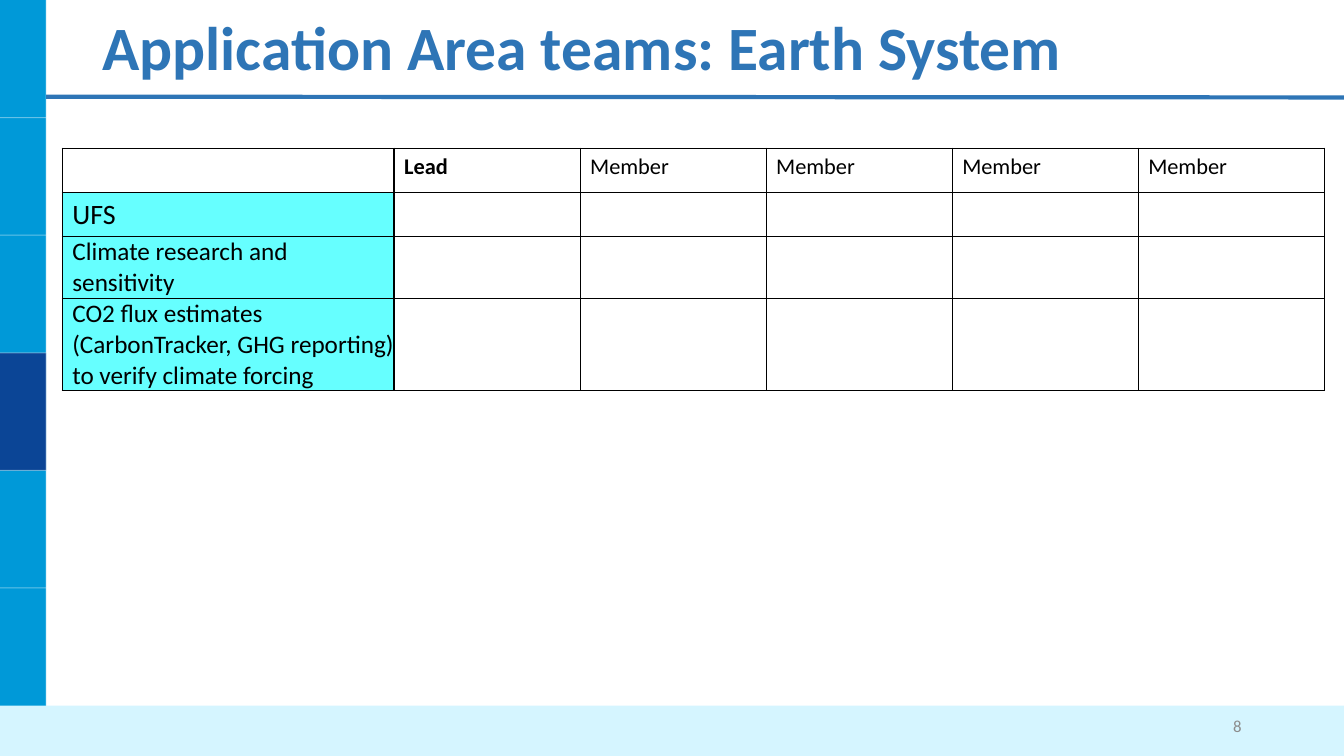
from dataclasses import dataclass

import pptx
import pptx.dml.color
import pptx.enum.shapes
import pptx.enum.text
import pptx.oxml
import pptx.oxml.ns
import pptx.util
from lxml import etree

Pt = pptx.util.Pt
ANCHOR = pptx.enum.text.MSO_ANCHOR
ALIGN = pptx.enum.text.PP_ALIGN

PAGE_WIDTH, PAGE_HEIGHT = 960, 540
BAND_WIDTH = 33
BAND_STEP = 84
FOOTER_TOP = 6 * BAND_STEP
FONT = "Calibri"
BLUE = "2E75B6"
CYAN = "66FFFF"


@dataclass
class Block:
    left: float
    top: float
    width: float
    height: float
    fill: str


@dataclass
class Rule:
    x1: float
    y1: float
    x2: float
    y2: float
    color: str = "FFFFFF"
    width: float = 0.75
    opacity: int = 40


@dataclass
class Topic:
    text: str
    size: float
    height: float
    compact: bool = True


BLOCKS = [
    Block(0, 0, BAND_WIDTH, PAGE_HEIGHT, "0099D8"),
    Block(0, 3 * BAND_STEP, BAND_WIDTH, BAND_STEP, "0B4596"),
    Block(0, FOOTER_TOP, PAGE_WIDTH, PAGE_HEIGHT - FOOTER_TOP, "D5F5FF"),
]
RULES = [
    *(Rule(0, step * BAND_STEP, BAND_WIDTH, step * BAND_STEP) for step in range(1, 6)),
    Rule(BAND_WIDTH, 0, BAND_WIDTH, FOOTER_TOP),
    Rule(BAND_WIDTH, 69.1, PAGE_WIDTH, 69.6, BLUE, 3, 100),
]
HEADINGS = ["", "Lead", "Member", "Member", "Member", "Member"]
TOPICS = [
    Topic("UFS", 20, 31.7, compact=False),
    Topic("Climate research and sensitivity", 18, 44),
    Topic("CO2 flux estimates (CarbonTracker, GHG reporting) to verify climate forcing", 18, 66),
]
HEADING_HEIGHT = 31.7
TOPIC_WIDTH, MEMBER_WIDTH = 237, 132.9


def rgb(color: str) -> pptx.dml.color.RGBColor:
    return pptx.dml.color.RGBColor.from_string(color)


def write(frame, text: str, size: float, color: str = "000000", bold: bool = False) -> None:
    frame.text = text
    for span in frame.paragraphs[0].runs:
        span.font.name = FONT
        span.font.size = Pt(size)
        span.font.bold = bold
        span.font.color.rgb = rgb(color)


def draw_block(page, block: Block) -> None:
    shape = page.shapes.add_shape(
        pptx.enum.shapes.MSO_SHAPE.RECTANGLE,
        Pt(block.left), Pt(block.top), Pt(block.width), Pt(block.height))
    shape.shadow.inherit = False
    shape.fill.solid()
    shape.fill.fore_color.rgb = rgb(block.fill)
    shape.line.fill.background()


def draw_rule(page, rule: Rule) -> None:
    line = page.shapes.add_connector(
        pptx.enum.shapes.MSO_CONNECTOR.STRAIGHT,
        Pt(rule.x1), Pt(rule.y1), Pt(rule.x2), Pt(rule.y2))
    line.line.color.rgb = rgb(rule.color)
    line.line.width = Pt(rule.width)
    properties = line._element.spPr
    if rule.opacity < 100:
        color = properties.find(".//" + pptx.oxml.ns.qn("a:srgbClr"))
        alpha = etree.SubElement(color, pptx.oxml.ns.qn("a:alpha"))
        alpha.set("val", str(rule.opacity * 1000))
    etree.SubElement(properties, pptx.oxml.ns.qn("a:effectLst"))


def style_cell(cell, fill: str = "") -> None:
    """Draw a thin black border round the cell and set its fill."""
    properties = cell._tc.get_or_add_tcPr()
    for side in ("lnL", "lnR", "lnT", "lnB"):
        properties.append(pptx.oxml.parse_xml(
            f'<a:{side} {pptx.oxml.ns.nsdecls("a")} w="{Pt(1)}"><a:solidFill>'
            f'<a:srgbClr val="000000"/></a:solidFill></a:{side}>'))
    if fill:
        cell.fill.solid()
        cell.fill.fore_color.rgb = rgb(fill)
    else:
        cell.fill.background()


def draw_teams(page) -> None:
    heights = [HEADING_HEIGHT, *(topic.height for topic in TOPICS)]
    widths = [TOPIC_WIDTH] + [MEMBER_WIDTH] * (len(HEADINGS) - 1)
    table = page.shapes.add_table(
        len(heights), len(widths), Pt(44.5), Pt(105.8), Pt(sum(widths)), Pt(sum(heights))).table
    table.first_row = table.horz_banding = False
    for column, width in zip(table.columns, widths):
        column.width = Pt(width)
    for row, height in zip(table.rows, heights):
        row.height = Pt(height)
        for index, cell in enumerate(row.cells):
            style_cell(cell, CYAN if index == 0 and row is not table.rows[0]
                       and height and cell is not None and not is_heading(table, cell) else "")
    for index, heading in enumerate(HEADINGS):
        write(table.cell(0, index).text_frame, heading, 16, bold=heading == "Lead")
    for index, topic in enumerate(TOPICS, start=1):
        cell = table.cell(index, 0)
        write(cell.text_frame, topic.text, topic.size)
        if topic.compact:
            cell.vertical_anchor = ANCHOR.MIDDLE
            cell.margin_right = cell.margin_top = cell.margin_bottom = 0


def is_heading(table, cell) -> bool:
    return any(cell._tc is other._tc for other in table.rows[0].cells)


def draw_title(page) -> None:
    title = page.shapes.title
    title.left, title.top, title.width, title.height = Pt(66), Pt(3), Pt(828), Pt(65.5)
    write(title.text_frame, "Application Area teams: Earth System", 44, BLUE, bold=True)
    title.text_frame.word_wrap = True
    title.text_frame.vertical_anchor = ANCHOR.MIDDLE
    title.text_frame.paragraphs[0].alignment = ALIGN.LEFT
    title.text_frame.paragraphs[0].line_spacing = 0.9


def draw_page_number(page) -> None:
    box = page.shapes.add_textbox(Pt(678), Pt(FOOTER_TOP), Pt(216), Pt(28.8))
    write(box.text_frame, "8", 12, "8C8C8C")
    box.text_frame.word_wrap = True
    box.text_frame.vertical_anchor = ANCHOR.MIDDLE
    box.text_frame.paragraphs[0].alignment = ALIGN.RIGHT


def main() -> None:
    deck = pptx.Presentation()
    deck.slide_width, deck.slide_height = Pt(PAGE_WIDTH), Pt(PAGE_HEIGHT)
    page = deck.slides.add_slide(deck.slide_layouts[5])
    for block in BLOCKS:
        draw_block(page, block)
    for rule in RULES:
        draw_rule(page, rule)
    draw_title(page)
    draw_teams(page)
    draw_page_number(page)
    deck.save("out.pptx")


if __name__ == "__main__":
    main()
